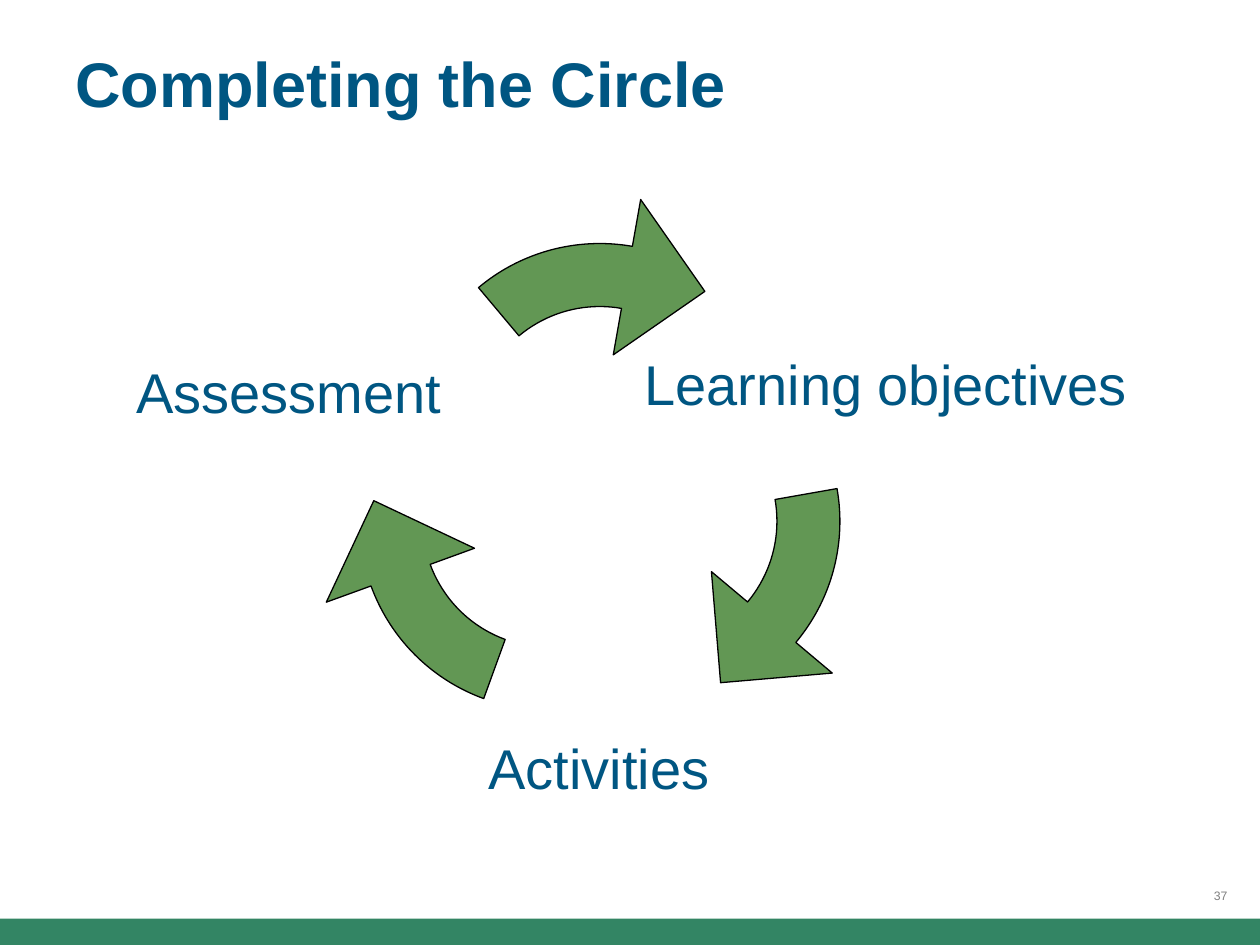
"""Build the slide "Completing the Circle": three arrows in a ring with labels."""
from math import cos, radians, sin, tan

from lxml.etree import SubElement
from pptx import Presentation
from pptx.dml.color import RGBColor as Rgb
from pptx.enum.shapes import MSO_SHAPE as Shape
from pptx.enum.text import MSO_ANCHOR as Anchor, PP_ALIGN as Align
from pptx.oxml.ns import qn
from pptx.util import Cm, Pt

BLUE, GREEN, LEAF, GREY, BLACK = "005682", "00673E", "629754", "808080", "000000"
TITLE = {"size": Pt(36), "bold": True}
LABEL = {"size": Pt(32)}
SMALL = {"size": Pt(7)}
ZERO = dict.fromkeys(("margin_left", "margin_top", "margin_right", "margin_bottom"), 0)
RING, HOLE = 3.8, 2.53


def tint(code):
    return Rgb.from_string(code)


def apply(item, values):
    for key, value in values.items():
        setattr(item, key, value)


def spot(radius, angle):
    turn = radians(angle)
    return RING + radius * cos(turn), RING + radius * sin(turn)


def line(radius, angle):
    return "lnTo", [spot(radius, angle)]


def curve(radius, start, end):
    pull = 4 / 3 * tan(radians(end - start) / 4) * radius
    (ax, ay), (bx, by) = spot(radius, start), spot(radius, end)
    a, b = radians(start), radians(end)
    return "cubicBezTo", [(ax - pull * sin(a), ay + pull * cos(a)),
                          (bx + pull * sin(b), by - pull * cos(b)), (bx, by)]


class Deck:
    def __init__(self, font):
        self.font = font
        self.prs = Presentation()
        apply(self.prs, {"slide_width": Cm(25.4), "slide_height": Cm(19.05)})
        self.slide = self.prs.slides.add_slide(self.prs.slide_layouts[6])

    def text(self, words, box, color, style, frame=None, para=None):
        body = self.slide.shapes.add_textbox(*map(Cm, box)).text_frame
        apply(body, {"word_wrap": True, **(frame or {})})
        first = body.paragraphs[0]
        first.text = words
        apply(first, para or {})
        apply(first.font, {"name": self.font, **style})
        first.font.color.rgb = tint(color)

    def label(self, words, x, y, width, height=1.4):
        box = (x - width / 2, y - height / 2, width, height)
        frame = {"word_wrap": False, "vertical_anchor": Anchor.MIDDLE, **ZERO}
        self.text(words, box, BLUE, LABEL, frame, {"alignment": Align.CENTER})

    def paint(self, shape, color):
        shape.shadow.inherit = False
        shape.fill.solid()
        shape.fill.fore_color.rgb = tint(color)

    def bar(self, box, color, alpha):
        shape = self.slide.shapes.add_shape(Shape.RECTANGLE, *map(Cm, box))
        self.paint(shape, color)
        shape.line.fill.background()
        fill = shape.fill.fore_color._xFill.find(qn("a:srgbClr"))
        SubElement(fill, qn("a:alpha"), val=str(alpha * 1000))

    def arrow(self, x, y, turn):
        form = self.slide.shapes.build_freeform(Cm(x - RING), Cm(y - RING))
        form.add_line_segments([(Cm(x + RING), Cm(y + RING))], close=False)
        shape = form.convert_to_shape()
        shape.rotation = turn
        self.trace(shape, [
            ("moveTo", [spot(HOLE, -80)]),
            curve(HOLE, -80, -90), curve(HOLE, -90, -130),
            line(RING, -130), curve(RING, -130, -90), curve(RING, -90, -80),
            line(4.76, -80), line(3.54, -53.2), line(1.58, -80), line(HOLE, -80),
            ("close", [])])
        self.paint(shape, LEAF)
        shape.line.color.rgb = tint(BLACK)
        shape.line.width = Pt(0.75)

    def trace(self, shape, steps):
        track = next(shape._element.iter(qn("a:path")))
        for part in list(track):
            track.remove(part)
        for kind, dots in steps:
            step = SubElement(track, qn("a:" + kind))
            for x, y in dots:
                SubElement(step, qn("a:pt"), x=str(int(Cm(x))), y=str(int(Cm(y))))

    def save(self):
        self.prs.save("out.pptx")


def main():
    deck = Deck("Arial")
    deck.text("37", (24.22, 17.78, 1.18, 0.74), GREY, SMALL)
    deck.bar((-0.1, 18.52, 25.5, 0.56), GREEN, 80)
    deck.text("Completing the Circle", (1.27, 0.84, 22.23, 1.73), BLUE, TITLE,
              {"vertical_anchor": Anchor.BOTTOM}, {"line_spacing": 0.9})
    for i, (x, y) in enumerate([(12.09, 8.71), (13.13, 10.51), (11.05, 10.51)]):
        deck.arrow(x, y, 120 * i)
    deck.label("Learning objectives", 17.86, 7.73, 9.8)
    deck.label("Activities", 12.08, 15.47, 4.5)
    deck.label("Assessment", 5.83, 7.88, 6.2)
    deck.save()


if __name__ == "__main__":
    main()
